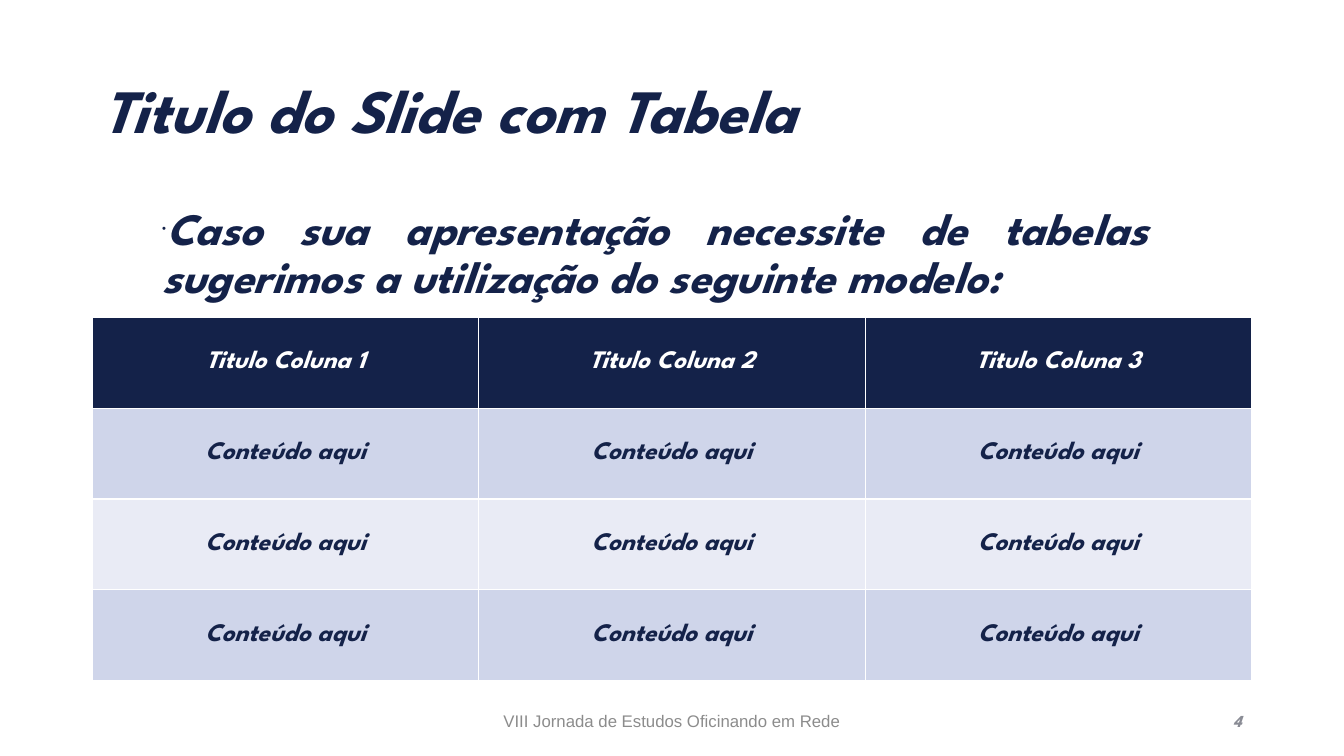
from dataclasses import dataclass

from lxml.etree import SubElement
from pptx import Presentation
from pptx.dml.color import RGBColor
from pptx.enum.text import MSO_ANCHOR, MSO_AUTO_SIZE, PP_ALIGN
from pptx.oxml.ns import qn
from pptx.shapes.base import BaseShape
from pptx.slide import Slide
from pptx.text.text import TextFrame
from pptx.util import Inches, Pt

NAVY = RGBColor(0x14, 0x22, 0x49)
WHITE = RGBColor(0xFF, 0xFF, 0xFF)
BAND = RGBColor(0xCF, 0xD5, 0xEA)
PALE = RGBColor(0xE9, 0xEB, 0xF5)
SLATE = RGBColor(0x8A, 0x8C, 0x95)
GRAY = RGBColor(0x8C, 0x8C, 0x8C)

# The slide is a grid of 160 columns by 90 rows.
UNIT = Inches(1) / 12
COLS, ROWS = 160, 90
LEFT, SPAN = 11, 138


@dataclass(frozen=True)
class Box:
    col: float
    row: float
    wide: float
    high: float

    def frame(self) -> tuple[int, int, int, int]:
        return tuple(round(n * UNIT) for n in (self.col, self.row, self.wide, self.high))


@dataclass(frozen=True)
class Style:
    size: int
    color: RGBColor
    align: PP_ALIGN
    font: str = "League Spartan"
    strong: bool = True  # bold italic


@dataclass(frozen=True)
class Note:
    text: str
    box: Box
    style: Style


TITLE = Note("Titulo do Slide com Tabela", Box(LEFT, 4.8, SPAN, 17.4),
             Style(44, NAVY, PP_ALIGN.LEFT))
BODY = Note("Caso sua apresentação necessite de tabelas sugerimos a utilização "
            "do seguinte modelo:", Box(18.1, 24, 119.9, 57.1),
            Style(32, NAVY, PP_ALIGN.JUSTIFY))
NOTES = (
    Note("4", Box(113, 83.4, 36, 4.8), Style(12, SLATE, PP_ALIGN.RIGHT)),
    Note("VIII Jornada de Estudos Oficinando em Rede", Box(53, 83.4, 54, 4.8),
         Style(12, GRAY, PP_ALIGN.CENTER, "Arial", False)),
)
GRID = Box(LEFT, 37.8, SPAN, 43.2)
HEADS = [f"Titulo Coluna {n}" for n in (1, 2, 3)]
CELLS = [HEADS] + [["Conteúdo aqui"] * len(HEADS)] * 3
FILLS = (NAVY, BAND, PALE, BAND)
HEAD = Style(18, WHITE, PP_ALIGN.CENTER)
CELL = Style(18, NAVY, PP_ALIGN.CENTER)


def write(frame: TextFrame, text: str, style: Style) -> None:
    frame.text = text
    para = frame.paragraphs[0]
    para.alignment = style.align
    font = para.runs[0].font
    font.name, font.size = style.font, Pt(style.size)
    font.bold = font.italic = style.strong
    font.color.rgb = style.color


def place(shape: BaseShape, note: Note, anchor: MSO_ANCHOR) -> None:
    shape.left, shape.top, shape.width, shape.height = note.box.frame()
    frame = shape.text_frame
    write(frame, note.text, note.style)
    frame.word_wrap = True
    frame.auto_size = MSO_AUTO_SIZE.NONE
    frame.vertical_anchor = anchor


def add_bullet(shape: BaseShape) -> None:
    """Give the first paragraph a small navy bullet with no indent."""
    props = shape.text_frame.paragraphs[0]._p.get_or_add_pPr()
    props.set("marL", "0")
    props.set("indent", "0")
    color = SubElement(props, qn("a:buClr"))
    SubElement(color, qn("a:srgbClr"), val=str(NAVY))
    SubElement(props, qn("a:buSzPct"), val="25000")
    SubElement(props, qn("a:buFont"), typeface="Arial")
    SubElement(props, qn("a:buChar"), char="•")


def add_grid(slide: Slide) -> None:
    table = slide.shapes.add_table(len(CELLS), len(HEADS), *GRID.frame()).table
    for r, (texts, fill) in enumerate(zip(CELLS, FILLS)):
        for c, text in enumerate(texts):
            cell = table.cell(r, c)
            cell.fill.solid()
            cell.fill.fore_color.rgb = fill
            cell.margin_left = cell.margin_right = 0
            cell.vertical_anchor = MSO_ANCHOR.MIDDLE
            write(cell.text_frame, text, CELL if r else HEAD)


def main() -> None:
    deck = Presentation()
    deck.slide_width, deck.slide_height = round(COLS * UNIT), round(ROWS * UNIT)
    slide = deck.slides.add_slide(deck.slide_layouts[1])
    title, body = slide.placeholders
    place(title, TITLE, MSO_ANCHOR.MIDDLE)
    place(body, BODY, MSO_ANCHOR.TOP)
    for shape in (title, body):
        shape.text_frame.paragraphs[0].line_spacing = 0.9
    body.text_frame.paragraphs[0].space_before = Pt(6.4)
    add_bullet(body)
    add_grid(slide)
    for note in NOTES:
        place(slide.shapes.add_textbox(*note.box.frame()), note, MSO_ANCHOR.MIDDLE)
    deck.save("out.pptx")


if __name__ == "__main__":
    main()
